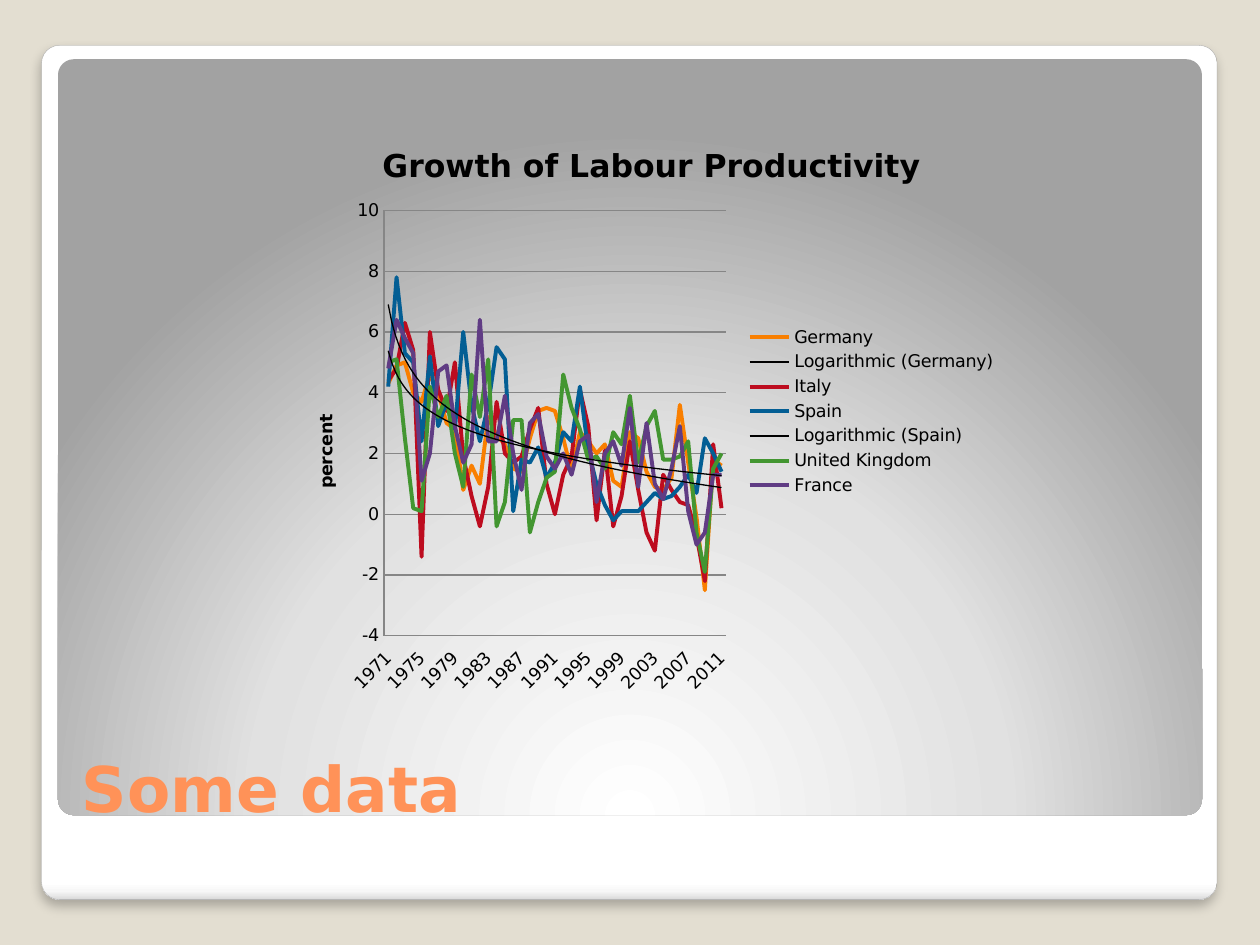
from lxml import etree
from pptx import Presentation
from pptx.chart.data import CategoryChartData
from pptx.dml.color import RGBColor
from pptx.enum.chart import XL_CHART_TYPE, XL_LEGEND_POSITION, XL_TICK_LABEL_POSITION, XL_TICK_MARK
from pptx.enum.shapes import MSO_SHAPE
from pptx.enum.text import MSO_ANCHOR, PP_ALIGN
from pptx.oxml import parse_xml
from pptx.oxml.ns import nsdecls, qn
from pptx.util import Inches, Pt

LINE = XL_CHART_TYPE.LINE
RIGHT = XL_LEGEND_POSITION.RIGHT
LOW = XL_TICK_LABEL_POSITION.LOW
NO_TICK = XL_TICK_MARK.NONE
ROUNDED = MSO_SHAPE.ROUNDED_RECTANGLE
BOTTOM = MSO_ANCHOR.BOTTOM
LEFT = PP_ALIGN.LEFT

FONT = "DejaVu Sans"
COLORS = {
    "background": "E3DED1", "border": "A4A4A4", "title": "FF9258",
    "text": "000000", "grid": "868686",
    "Germany": "F07F09", "Italy": "9F2936", "Spain": "1B587C",
    "United Kingdom": "4E8542", "France": "604878",
}
YEARS = [str(year) for year in range(1971, 2012)]
GROWTH = {
    "Germany": [4.3, 4.9, 5, 4, 3.7, 4.6, 4, 3, 2.8, 0.8, 1.6, 1, 3.2, 2.6,
                2.3, 1.5, 1.4, 2.5, 3.4, 3.5, 3.4, 2.5, 1.4, 2.7, 2.4, 2, 2.3,
                1.1, 0.9, 2.7, 2.5, 1.4, 0.9, 0.8, 1.2, 3.6, 1.7, -0.1, -2.5,
                1.8, 1.6],
    "Italy": [4.4, 4.8, 6.3, 5.4, -1.4, 6, 4.1, 3.4, 5, 1.9, 0.6, -0.4, 0.9,
              3.7, 2, 1.7, 1.9, 2.8, 3.5, 1, 0, 1.3, 1.9, 4.1, 2.9, -0.2, 2.1,
              -0.4, 0.6, 2.4, 0.8, -0.6, -1.2, 1.3, 0.8, 0.4, 0.3, -0.7, -2.2,
              2.3, 0.2],
    "Spain": [4.2, 7.8, 5.3, 5, 2.4, 5.2, 2.9, 3.7, 2.8, 6, 3.6, 2.4, 3.6, 5.5,
              5.1, 0.1, 1.8, 1.7, 2.2, 1.2, 1.7, 2.7, 2.4, 4.2, 2.1, 1, 0.3,
              -0.2, 0.1, 0.1, 0.1, 0.4, 0.7, 0.5, 0.6, 0.9, 1.3, 0.7, 2.5, 2,
              1.4],
    "United Kingdom": [5, 5.1, 2.5, 0.2, 0.1, 4.2, 3.2, 3.9, 2, 0.9, 4.6, 3.2,
                       5.1, -0.4, 0.4, 3.1, 3.1, -0.6, 0.4, 1.2, 1.4, 4.6, 3.5,
                       2.8, 1.8, 1.9, 1.5, 2.7, 2.3, 3.9, 1.7, 2.9, 3.4, 1.8,
                       1.8, 1.9, 2.4, -0.6, -1.9, 1.5, 2],
    "France": [4.8, 6.4, 5.8, 5.3, 1.1, 2, 4.7, 4.9, 2.9, 1.7, 2.3, 6.4, 2.4,
               2.4, 3.9, 2, 0.8, 3, 3.3, 1.9, 1.5, 2, 1.3, 2.4, 2.6, 0.4, 2,
               2.4, 1.6, 3.5, 0.9, 3, 1, 0.5, 1.5, 2.9, 0.1, -1, -0.6, 1.3,
               1.3],
}
TRENDED = ("Germany", "Spain")


def rgb(name):
    return RGBColor.from_string(COLORS[name])


def set_font(font, size, color, bold=False):
    font.name, font.size, font.bold = FONT, Pt(size), bold
    font.color.rgb = rgb(color)


def add_panel(s, box, stops, direction):
    sp = s.shapes.add_shape(ROUNDED, *box)
    sp.adjustments[0] = 0.021
    sp.shadow.inherit = False
    sp.line.fill.background()
    gs = "".join(f'<a:gs pos="{pos * 1000}"><a:srgbClr val="{color}"/></a:gs>' for pos, color in stops)
    gradient = f'<a:gradFill {nsdecls("a")} rotWithShape="1"><a:gsLst>{gs}</a:gsLst>{direction}</a:gradFill>'
    sp.element.spPr.find(qn("a:prstGeom")).addnext(parse_xml(gradient))
    return sp


def add_frame(s, box):
    stops = [(0, "FFFFFF"), (98, "FFFFFF"), (99, "F7F7F7"), (100, "DADADA")]
    sp = add_panel(s, box, stops, '<a:lin ang="5400000" scaled="0"/>')
    sp.line.color.rgb = rgb("border")
    sp.line.width = Pt(0.16)
    sp.element.spPr.find(qn("a:effectLst")).append(parse_xml(
        f'<a:outerShdw {nsdecls("a")} blurRad="{Pt(6)}" dist="{Pt(4)}" dir="5400000" '
        'algn="tl" rotWithShape="0"><a:srgbClr val="000000"><a:alpha val="25000"/>'
        '</a:srgbClr></a:outerShdw>'))


def add_backdrop(s, box):
    stops = [(0, "FFFFFF"), (55, "E1E1E1"), (100, "A2A2A2")]
    add_panel(s, box, stops, '<a:path path="circle"><a:fillToRect l="50000" t="175000" '
                             'r="50000" b="-75000"/></a:path>')


def add_title(s, box):
    title = s.shapes.title
    title.left, title.top, title.width, title.height = box
    s.shapes.element.append(title.element)
    tf = title.text_frame
    tf.text = "Some data"
    tf.word_wrap = True
    tf.vertical_anchor = BOTTOM
    p = tf.paragraphs[0]
    p.alignment = LEFT
    set_font(p.font, 36, "title", True)


def set_layout(element, index, target="", **shares):
    for old in element.findall(qn("c:layout")):
        element.remove(old)
    inner = f'<c:layoutTarget val="{target}"/>' if target else ""
    modes = "".join(f'<c:{key}Mode val="edge"/>' for key in ("x", "y"))
    values = "".join(f'<c:{key} val="{share}"/>' for key, share in shares.items())
    element.insert(index, parse_xml(
        f'<c:layout {nsdecls("c")}><c:manualLayout>{inner}{modes}{values}'
        '</c:manualLayout></c:layout>'))


def add_heading(owner, text, size, **shares):
    owner.text_frame.text = text
    set_font(owner.text_frame.paragraphs[0].font, size, "text", True)
    set_layout(owner.element, 1, **shares)


def style_series(chart):
    for series, ser in zip(chart.plots[0].series, chart.element.xpath(".//c:ser")):
        series.smooth = False
        series.format.line.width = Pt(2.25)
        series.format.line.color.rgb = rgb(series.name)
        color = ser.find(".//" + qn("a:srgbClr"))
        etree.SubElement(color, qn("a:satMod")).set("val", "150000")
        if series.name in TRENDED:
            ser.find(qn("c:cat")).addprevious(parse_xml(
                f'<c:trendline {nsdecls("c", "a")}><c:spPr><a:ln w="{Pt(0.75)}"><a:solidFill>'
                f'<a:srgbClr val="{COLORS["text"]}"/></a:solidFill></a:ln></c:spPr>'
                '<c:trendlineType val="log"/><c:dispRSqr val="0"/><c:dispEq val="0"/>'
                '</c:trendline>'))


def style_axes(chart):
    years, growth = chart.category_axis, chart.value_axis
    growth.has_major_gridlines = True
    growth.minimum_scale, growth.maximum_scale, growth.major_unit = -4, 10, 2
    years.tick_label_position = LOW
    for axis in (years, growth):
        axis.major_tick_mark = axis.minor_tick_mark = NO_TICK
        set_font(axis.tick_labels.font, 10, "text")
    for line in (years.format.line, growth.format.line, growth.major_gridlines.format.line):
        line.color.rgb = rgb("grid")
        line.width = Pt(0.75)
    chart.element.xpath(".//c:catAx/c:txPr/a:bodyPr")[0].set("rot", "-2700000")
    chart.element.xpath(".//c:catAx/c:lblOffset")[0].addnext(
        parse_xml(f'<c:tickLblSkip {nsdecls("c")} val="4"/>'))
    add_heading(growth.axis_title, "percent", 10, x=0.04, y=0.5)


def add_growth_chart(s, box):
    data = CategoryChartData()
    data.categories = YEARS
    for country, values in GROWTH.items():
        data.add_series(country, values)
    chart = s.shapes.add_chart(LINE, *box, data).chart
    set_font(chart.font, 10, "text")
    chart.plots[0].vary_by_categories = False
    chart.has_title = True
    add_heading(chart.chart_title, "Growth of Labour Productivity", 18, x=0.13, y=0.04)
    chart.has_legend = True
    chart.legend.position = RIGHT
    chart.legend.include_in_layout = False
    set_font(chart.legend.font, 10, "text")
    style_series(chart)
    style_axes(chart)
    set_layout(chart.element.xpath(".//c:plotArea")[0], 0, "inner", x=0.14, y=0.16, w=0.47, h=0.72)


def main():
    prs = Presentation()
    prs.slide_width, prs.slide_height = Inches(10), Inches(7.5)

    def percent_box(x, y, w, h):
        sizes = (prs.slide_width, prs.slide_height) * 2
        return [int(size * share / 100) for size, share in zip(sizes, (x, y, w, h))]

    s = prs.slides.add_slide(prs.slide_layouts[5])
    s.background.fill.solid()
    s.background.fill.fore_color.rgb = rgb("background")
    add_frame(s, percent_box(3.3, 4.8, 93.3, 90.4))
    add_backdrop(s, percent_box(4.6, 6.27, 90.8, 80))
    add_title(s, percent_box(5.5, 72.67, 89.5, 15.33))
    add_growth_chart(s, percent_box(22.4, 12.27, 57.7, 62.53))
    prs.save("out.pptx")


if __name__ == "__main__":
    main()
